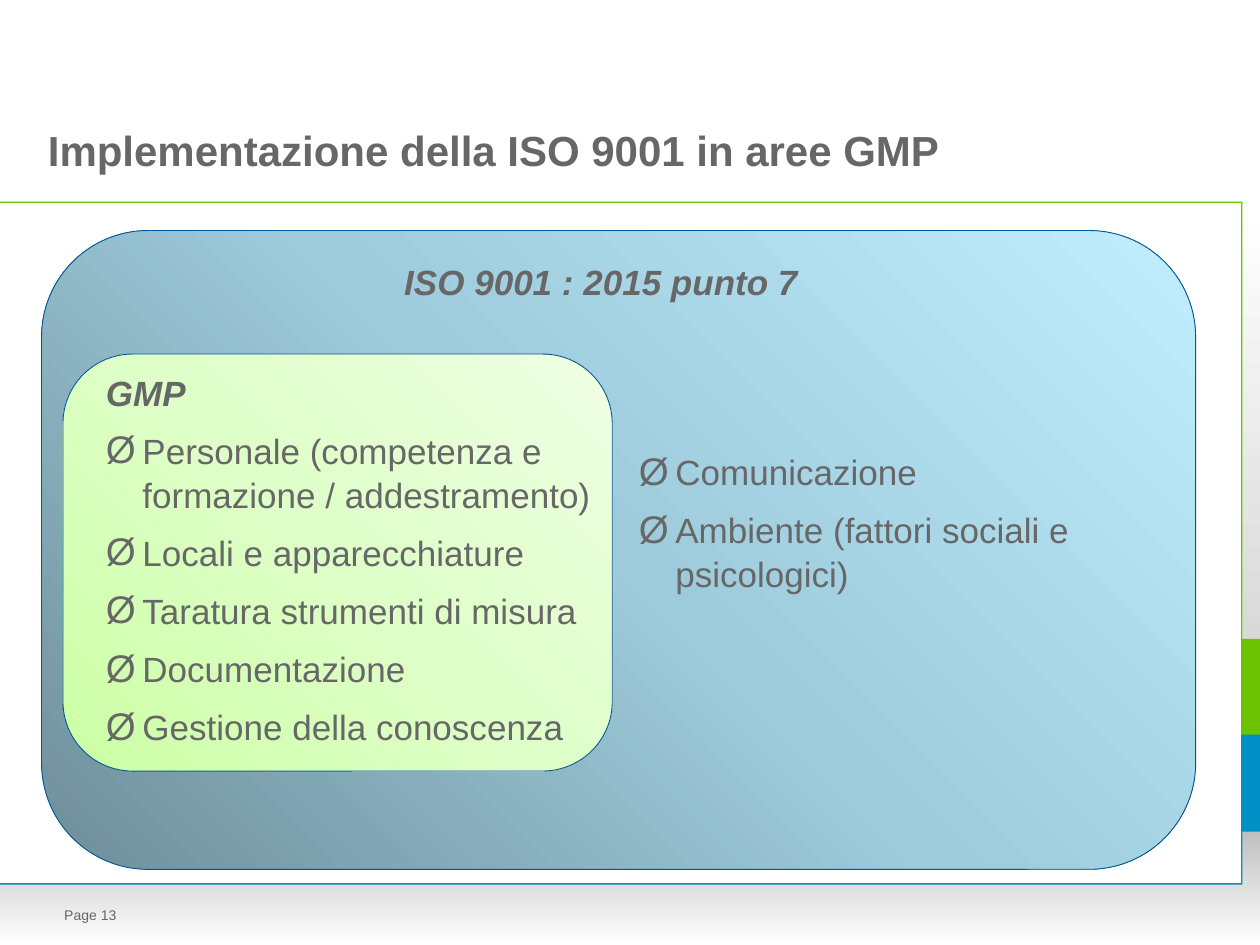
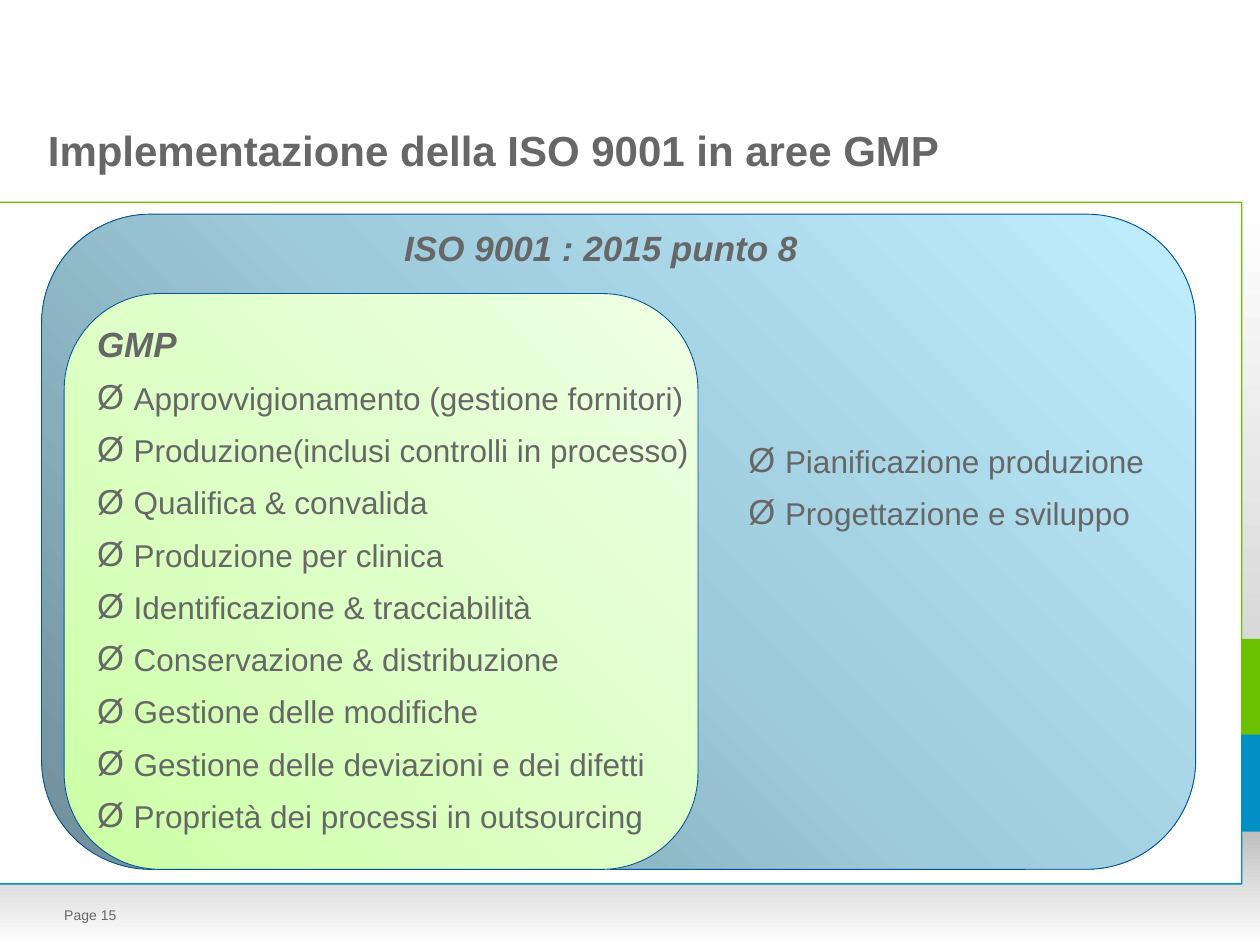
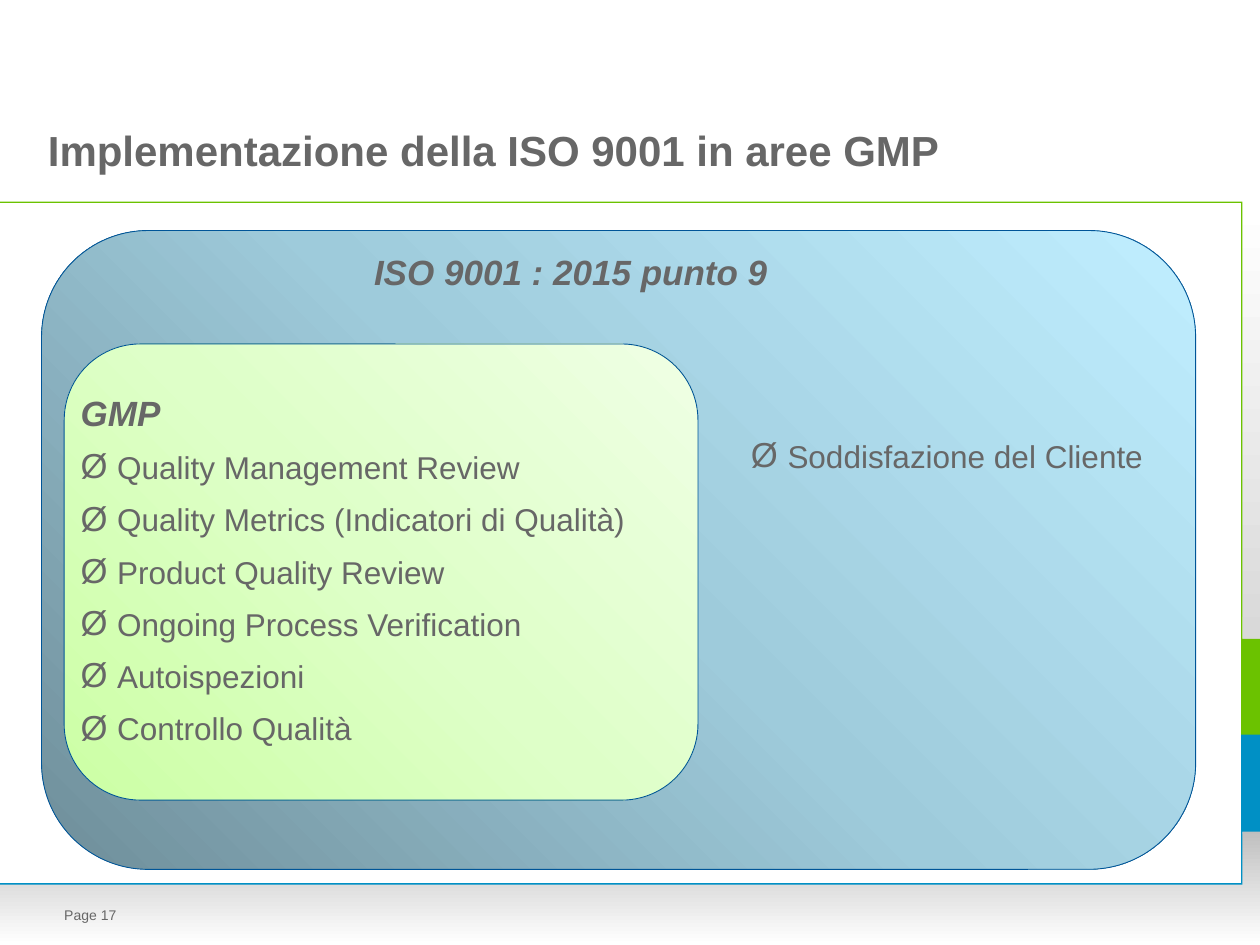
"""Builds three slides comparing ISO 9001 clauses with GMP topics."""
import dataclasses

import pptx
import pptx.dml.color
import pptx.enum.shapes
import pptx.enum.text
import pptx.oxml
import pptx.oxml.ns
import pptx.util

TITLE = "Implementazione della ISO 9001 in aree GMP"
SLIDES = [
    {
        "page": "Page 13",
        "head": "ISO 9001 : 2015 punto 7",
        "gmp": [
            "Personale (competenza e formazione / addestramento)",
            "Locali e apparecchiature",
            "Taratura strumenti di misura",
            "Documentazione",
            "Gestione della conoscenza",
        ],
        "iso": ["Comunicazione", "Ambiente (fattori sociali e psicologici)"],
        "size": 20,
        "outer": (33, 183, 916, 507),
        "inner": (50, 281, 436, 331),
        "label": (311, 202, 452, 58),
        "left": (74, 288, 413, 324),
        "right": (497, 351, 414, 277),
    },
    {
        "page": "Page 15",
        "head": "ISO 9001 : 2015 punto 8",
        "gmp": [
            "Approvvigionamento (gestione fornitori)",
            "Produzione(inclusi controlli in processo)",
            "Qualifica & convalida",
            "Produzione per clinica",
            "Identificazione & tracciabilità",
            "Conservazione & distribuzione",
            "Gestione delle modifiche",
            "Gestione delle deviazioni e dei difetti",
            "Proprietà dei processi in outsourcing",
        ],
        "iso": ["Pianificazione produzione", "Progettazione e sviluppo"],
        "size": 18,
        "outer": (33, 170, 916, 520),
        "inner": (51, 233, 503, 457),
        "label": (311, 175, 452, 58),
        "left": (67, 249, 508, 441),
        "right": (584, 344, 414, 277),
    },
    {
        "page": "Page 17",
        "head": "ISO 9001 : 2015 punto 9",
        "gmp": [
            "Quality Management Review",
            "Quality Metrics (Indicatori di Qualità)",
            "Product Quality Review",
            "Ongoing Process Verification",
            "Autoispezioni",
            "Controllo Qualità",
        ],
        "iso": ["Soddisfazione del Cliente"],
        "size": 18,
        "outer": (33, 183, 916, 507),
        "inner": (51, 273, 503, 362),
        "label": (287, 194, 452, 58),
        "left": (54, 304, 508, 331),
        "right": (586, 340, 414, 277),
    },
]


@dataclasses.dataclass(frozen=True)
class Theme:
    """Colours, type sizes and shared places."""
    font: str = "Arial"
    text: str = "676767"
    edge: str = "005598"
    blue: tuple = ("6F8E9A", "9ECBDB", "C0EEFF")
    green: tuple = ("CCFFA5", "DEFFC8", "EFFFE4")
    title: int = 24
    head: int = 20
    page: int = 8
    lead: float = 1.05
    gap: float = 0.4
    indent: float = 0.29
    title_at: tuple = (38, 76, 880, 63)
    page_at: tuple = (51, 703, 700, 47)


LOOK = Theme()
UNIT = pptx.util.Inches(0.01)
WIDE, HIGH = 1000, 750
RAIL, TOP, MID, LOW, BASE = 986, 160, 507, 583, 702
BANDS = [
    ([(WIDE, HIGH), (WIDE, 659), (RAIL, 659), (RAIL, BASE), (0, BASE),
      (0, HIGH)], ("BFBFBF", "FFFFFF"), 90),
    ([(RAIL, TOP), (WIDE, TOP), (WIDE, MID + 1), (RAIL, MID + 1)],
     ("D9D9D9", "FFFFFF"), 270),
    ([(RAIL, MID), (RAIL, TOP), (0, TOP), (0, TOP + 1), (RAIL - 1, TOP + 1),
      (RAIL - 1, LOW + 1), (WIDE, LOW + 1), (WIDE, MID)], ("6BC200",), 0),
    ([(WIDE, LOW), (RAIL - 1, LOW), (RAIL - 1, BASE - 1), (0, BASE - 1),
      (0, BASE), (RAIL, BASE), (RAIL, 660), (WIDE, 660)], ("0090C5",), 0),
]


def rgb(code):
    """Turn a hex code into a colour."""
    return pptx.dml.color.RGBColor.from_string(code)


def paint(shape, tones, angle, edge=None):
    """Fill a shape with one tone or an even gradient, and set its line."""
    shape.shadow.inherit = False
    if len(tones) == 1:
        shape.fill.solid()
        shape.fill.fore_color.rgb = rgb(tones[0])
    else:
        shape.fill.background()
        step = 100000 // (len(tones) - 1)
        stops = "".join(
            f'<a:gs pos="{i * step}"><a:srgbClr val="{tone}"/></a:gs>'
            for i, tone in enumerate(tones))
        grad = pptx.oxml.parse_xml(
            f'<a:gradFill {pptx.oxml.ns.nsdecls("a")} rotWithShape="1">'
            f'<a:gsLst>{stops}</a:gsLst>'
            f'<a:lin ang="{angle * 60000}" scaled="0"/></a:gradFill>')
        props = shape.element.spPr
        props.replace(props.find(pptx.oxml.ns.qn("a:noFill")), grad)
    if edge:
        shape.line.color.rgb = rgb(edge)
        shape.line.width = pptx.util.Pt(0.5)
    else:
        shape.line.fill.background()


def place(shape, spot):
    """Move and size a shape in grid units."""
    shape.left, shape.top, shape.width, shape.height = (
        int(part * UNIT) for part in spot)


def frame(shape, anchor, inset=True):
    """Set up wrapping, anchor and insets, and hand back the text frame."""
    area = shape.text_frame
    area.word_wrap = True
    area.auto_size = pptx.enum.text.MSO_AUTO_SIZE.NONE
    area.vertical_anchor = anchor
    if not inset:
        area.margin_left = area.margin_right = 0
        area.margin_top = area.margin_bottom = 0
    return area


def write(para, text, size, bold=False, italic=False):
    """Add one formatted run to a left-aligned paragraph."""
    para.alignment = pptx.enum.text.PP_ALIGN.LEFT
    run = para.add_run()
    run.text = text
    font = run.font
    font.name, font.size = LOOK.font, pptx.util.Pt(size)
    font.bold, font.italic = bold, italic
    font.color.rgb = rgb(LOOK.text)


def mark(para, bullet):
    """Give a paragraph its bullet and hanging indent, or neither."""
    props = para._p.get_or_add_pPr()
    hang = int(pptx.util.Inches(LOOK.indent)) if bullet else 0
    props.set("marL", str(hang))
    props.set("indent", str(-hang))
    parts = (['buSzPct val="110000"', f'buFont typeface="{LOOK.font}"',
              'buChar char="Ø"'] if bullet else ["buNone"])
    for part in parts:
        props.append(pptx.oxml.parse_xml(
            f'<a:{part} {pptx.oxml.ns.nsdecls("a")}/>'))


def fill_list(shape, spot, items, size, head=None):
    """Write an optional heading and a bullet list into a placeholder."""
    place(shape, spot)
    area = frame(shape, pptx.enum.text.MSO_ANCHOR.TOP)
    rows = ([(head, True)] if head else []) + [(item, False) for item in items]
    for i, (text, strong) in enumerate(rows):
        para = area.add_paragraph() if i else area.paragraphs[0]
        mark(para, not strong)
        para.line_spacing = LOOK.lead
        para.space_before = pptx.util.Pt(size * LOOK.gap if i else 0)
        write(para, text, LOOK.head if strong else size, strong, strong)


def add_text(slide, spot, text, size, anchor, inset=True, strong=False):
    """Add a one-line text box."""
    box = slide.shapes.add_textbox(0, 0, 0, 0)
    place(box, spot)
    write(frame(box, anchor, inset).paragraphs[0], text, size, strong, strong)


def add_bands(slide, master):
    """Draw the shared bands and move them to the master."""
    for i, (points, tones, angle) in enumerate(BANDS):
        pen = slide.shapes.build_freeform(*points[0], scale=UNIT)
        pen.add_line_segments(points[1:], close=True)
        band = pen.convert_to_shape()
        paint(band, tones, angle)
        master.shapes.element.insert(2 + i, band.element)


def add_slide(deck, data):
    """Build one slide from its content."""
    slide = deck.slides.add_slide(deck.slide_layouts[3])
    anchors = pptx.enum.text.MSO_ANCHOR
    title, left, right = slide.placeholders
    place(title, LOOK.title_at)
    area = frame(title, anchors.BOTTOM, inset=False)
    write(area.paragraphs[0], TITLE, LOOK.title, bold=True)
    fill_list(left, data["left"], data["gmp"], data["size"], "GMP")
    fill_list(right, data["right"], data["iso"], data["size"])
    panels = (("outer", LOOK.blue), ("inner", LOOK.green))
    for i, (name, tones) in enumerate(panels):
        panel = slide.shapes.add_shape(
            pptx.enum.shapes.MSO_SHAPE.ROUNDED_RECTANGLE, 0, 0, 0, 0)
        place(panel, data[name])
        paint(panel, tones, 315, LOOK.edge)
        slide.shapes.element.insert(2 + i, panel.element)
    add_text(slide, data["label"], data["head"], LOOK.head, anchors.TOP,
             strong=True)
    add_text(slide, LOOK.page_at, data["page"], LOOK.page, anchors.MIDDLE,
             inset=False)
    return slide


def main():
    """Build and save the deck."""
    deck = pptx.Presentation()
    deck.slide_width, deck.slide_height = WIDE * UNIT, HIGH * UNIT
    slides = [add_slide(deck, data) for data in SLIDES]
    add_bands(slides[0], deck.slide_master)
    deck.save("out.pptx")


if __name__ == "__main__":
    main()
